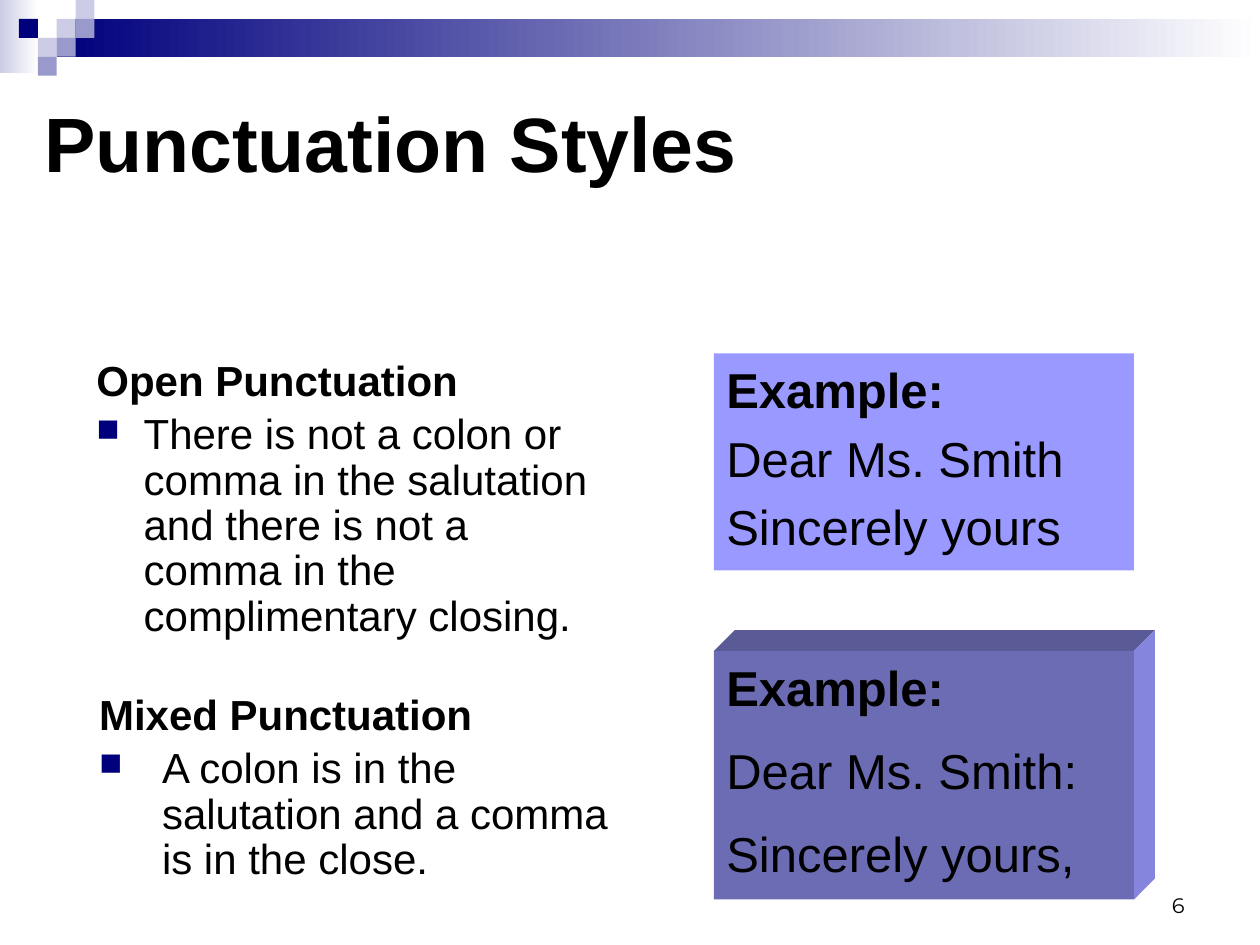
"""Build the slide on open and mixed punctuation styles."""
from dataclasses import dataclass
from typing import NamedTuple

from lxml import etree
from pptx import Presentation
from pptx.dml.color import RGBColor
from pptx.enum import shapes, text
from pptx.oxml.ns import qn
from pptx.util import Pt


@dataclass(frozen=True)
class Theme:
    """Colours, fonts and type sizes of the slide."""
    ink: str = "000000"
    paper: str = "FFFFFF"
    navy: str = "00007D"
    pale: str = "CCCCE6"
    middle: str = "9999CC"
    example: str = "9999FF"
    front: str = "6C6CB4"
    top: str = "5A5A96"
    side: str = "8585DD"
    font: str = "Arial"
    number_font: str = "Montserrat"
    title_size: int = 44
    example_size: int = 28
    body_size: int = 24
    number_size: int = 12


class Box(NamedTuple):
    """Position and size in points."""
    left: float
    top: float
    width: float
    height: float

    def lengths(self) -> list:
        """Return the four values as lengths."""
        return [Pt(value) for value in self]


class Tile(NamedTuple):
    """One square of the header mosaic."""
    column: int
    row: int
    colour: str


class Example(NamedTuple):
    """A box with a sample salutation and closing."""
    box: Box
    colour: str
    lines: tuple
    space: float


class Rule(NamedTuple):
    """A punctuation style with its explanation."""
    box: Box
    heading: str
    explanation: str
    indent: float
    heading_spacing: float


THEME = Theme()
TILE_SIZE = 10.8
DEPTH = 12
TILES = (
    Tile(3, 1, THEME.pale), Tile(4, 0, THEME.pale), Tile(4, 1, THEME.middle),
    Tile(2, 2, THEME.pale), Tile(1, 1, THEME.navy), Tile(3, 2, THEME.middle),
    Tile(2, 3, THEME.middle),
)
BANDS = (
    (Box(0, 0, 22, 42), THEME.pale),
    (Box(32.4, 10.8, 687.6, 21.6), THEME.navy),
)
RULES = (
    Rule(Box(48, 202, 300, 170), "Open Punctuation",
         "There is not a colon or comma in the salutation and there is not a "
         "comma in the complimentary closing.", 27, 0.9),
    Rule(Box(49.5, 390, 312, 120), "Mixed Punctuation",
         "A colon is in the salutation and a comma is in the close.", 36, 1.0),
)
EXAMPLES = (
    Example(Box(408, 202, 240, 124), THEME.example,
            ("Example:", "Dear Ms. Smith", "Sincerely yours"), 0.2),
    Example(Box(408, 372, 240, 142), THEME.front,
            ("Example:", "Dear Ms. Smith:", "Sincerely yours,"), 0.5),
)


def paint(shape, colour: str) -> None:
    """Give a shape a flat fill without line or shadow."""
    shape.shadow.inherit = False
    shape.fill.solid()
    shape.fill.fore_color.rgb = RGBColor.from_string(colour)
    shape.line.fill.background()


def add_rectangle(slide, box: Box, colour: str):
    """Add a flat rectangle."""
    shape = slide.shapes.add_shape(shapes.MSO_SHAPE.RECTANGLE, *box.lengths())
    paint(shape, colour)
    return shape


def add_band(slide, box: Box, colour: str) -> None:
    """Add a rectangle that fades to the paper colour on the right."""
    fill = add_rectangle(slide, box, colour).fill
    fill.gradient()
    fill.gradient_angle = 0
    for stop, position, shade in zip(fill.gradient_stops, (0, 1), (colour, THEME.paper)):
        stop.position = position
        stop.color.rgb = RGBColor.from_string(shade)


def add_face(slide, points: list, colour: str) -> None:
    """Add one slanted face of the raised box."""
    builder = slide.shapes.build_freeform(*points[0], scale=Pt(1))
    builder.add_line_segments(points[1:])
    paint(builder.convert_to_shape(), colour)


def add_depth(slide, box: Box) -> None:
    """Raise a box with a top face and a right face."""
    right, bottom = box.left + box.width, box.top + box.height
    corner = (right + DEPTH, box.top - DEPTH)
    add_face(slide, [(box.left, box.top), (box.left + DEPTH, box.top - DEPTH),
                     corner, (right, box.top)], THEME.top)
    add_face(slide, [(right, box.top), corner,
                     (right + DEPTH, bottom - DEPTH), (right, bottom)], THEME.side)


def add_bullet(paragraph, indent: float) -> None:
    """Give a paragraph a hanging square bullet."""
    properties = paragraph._p.get_or_add_pPr()
    properties.set("marL", str(Pt(indent)))
    properties.set("indent", str(-Pt(indent)))
    colour = etree.SubElement(properties, qn("a:buClr"))
    etree.SubElement(colour, qn("a:srgbClr"), val=THEME.navy)
    etree.SubElement(properties, qn("a:buSzPct"), val="75000")
    etree.SubElement(properties, qn("a:buChar"), char="■")


def write(frame, content: str, *, size: float, font: str = THEME.font,
          bold: bool = False, first: bool = False, before: float = 0,
          spacing: float = 1.0, indent: float = 0,
          align=text.PP_ALIGN.LEFT) -> None:
    """Write one formatted paragraph, bulleted when it has an indent."""
    paragraph = frame.paragraphs[0] if first else frame.add_paragraph()
    paragraph.alignment = align
    paragraph.line_spacing = spacing
    paragraph.space_before = Pt(before)
    if indent:
        add_bullet(paragraph, indent)
    run = paragraph.add_run()
    run.text = content
    run.font.name, run.font.size, run.font.bold = font, Pt(size), bold
    run.font.color.rgb = RGBColor.from_string(THEME.ink)


def prepare_frame(shape, anchor=text.MSO_ANCHOR.TOP):
    """Return the wrapping text frame of a shape."""
    frame = shape.text_frame
    frame.word_wrap = True
    frame.auto_size = text.MSO_AUTO_SIZE.NONE
    frame.vertical_anchor = anchor
    return frame


def add_title(slide, content: str) -> None:
    """Place and format the title."""
    title = slide.shapes.title
    title.left, title.top, title.width, title.height = Box(18, 54, 648, 54).lengths()
    frame = prepare_frame(title, text.MSO_ANCHOR.MIDDLE)
    write(frame, content, size=THEME.title_size, bold=True, first=True)


def add_rule(slide, rule: Rule) -> None:
    """Add a heading with its bulleted explanation."""
    frame = prepare_frame(slide.shapes.add_textbox(*rule.box.lengths()))
    size = THEME.body_size
    write(frame, rule.heading, size=size, bold=True, first=True,
          spacing=rule.heading_spacing)
    write(frame, rule.explanation, size=size, before=0.2 * size,
          spacing=0.9, indent=rule.indent)


def add_example(slide, example: Example) -> None:
    """Add a filled example box with a bold first line."""
    frame = prepare_frame(add_rectangle(slide, example.box, example.colour))
    size = THEME.example_size
    for index, line in enumerate(example.lines):
        first = index == 0
        write(frame, line, size=size, bold=first, first=first,
              before=0 if first else example.space * size)


def add_number(slide, content: str) -> None:
    """Add the slide number at the bottom right."""
    box = Box(516, 492, 168, 36)
    frame = prepare_frame(slide.shapes.add_textbox(*box.lengths()), text.MSO_ANCHOR.BOTTOM)
    write(frame, content, size=THEME.number_size, font=THEME.number_font,
          first=True, align=text.PP_ALIGN.RIGHT)


def main() -> None:
    """Build and save the presentation."""
    presentation = Presentation()
    presentation.slide_width, presentation.slide_height = Pt(720), Pt(540)
    slide = presentation.slides.add_slide(presentation.slide_layouts[5])
    for box, colour in BANDS:
        add_band(slide, box, colour)
    for tile in TILES:
        add_rectangle(slide, Box(tile.column * TILE_SIZE, tile.row * TILE_SIZE,
                                 TILE_SIZE, TILE_SIZE), tile.colour)
    add_number(slide, "6")
    add_title(slide, "Punctuation Styles")
    add_depth(slide, EXAMPLES[1].box)
    for rule, example in zip(RULES, EXAMPLES):
        add_rule(slide, rule)
        add_example(slide, example)
    presentation.save("out.pptx")


if __name__ == "__main__":
    main()
